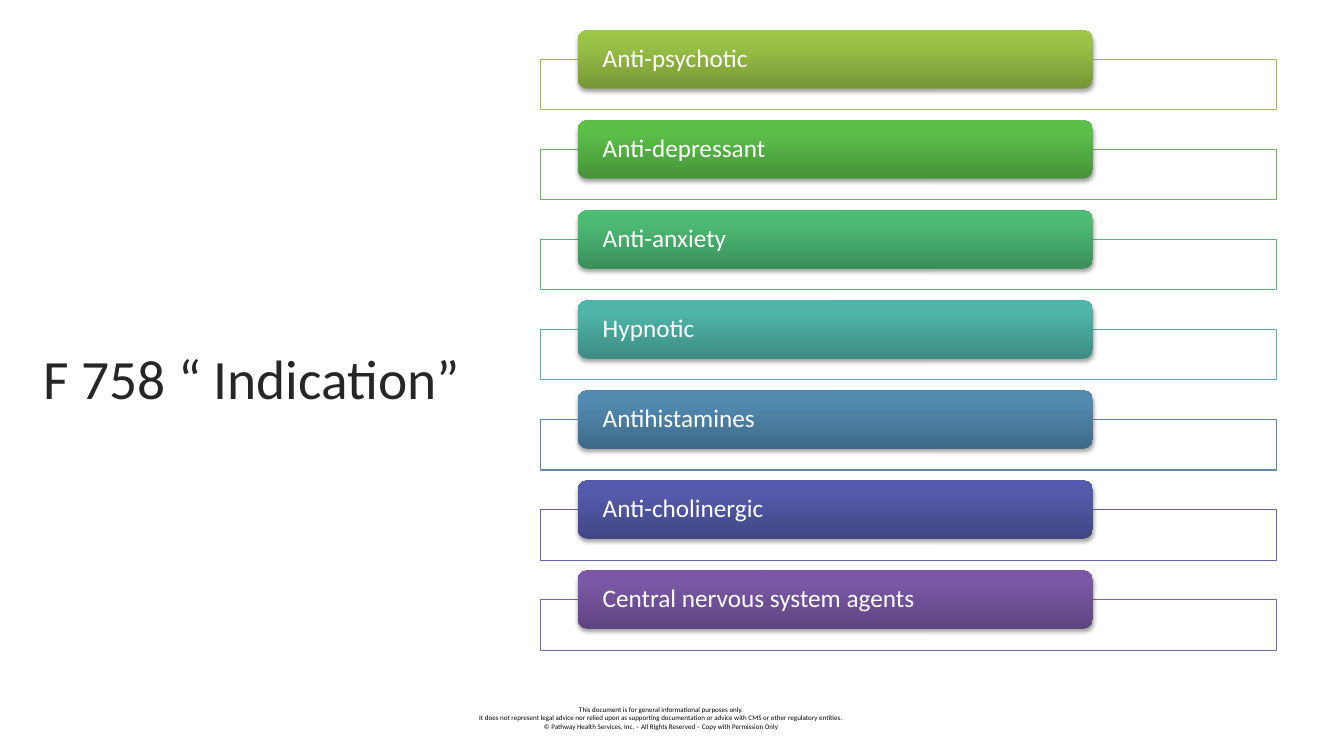
from copy import deepcopy

from lxml.etree import SubElement
from pptx import Presentation
from pptx.dml.color import RGBColor
from pptx.enum.shapes import MSO_SHAPE as Shape
from pptx.enum.text import MSO_ANCHOR as Anchor, MSO_AUTO_SIZE as AutoSize, PP_ALIGN as Align
from pptx.oxml.ns import qn
from pptx.util import Inches, Pt

WHITE = RGBColor(0xFF, 0xFF, 0xFF)
BLACK = RGBColor(0x00, 0x00, 0x00)
CHARCOAL = RGBColor(0x26, 0x26, 0x26)

TITLE = "F 758 “ Indication”"
DRUG_CLASSES = [
    ("Anti-psychotic", "9BBB59", ("779737", "9BC348", "9DC746")),
    ("Anti-depressant", "69B75B", ("479339", "5CBF4A", "5BC249")),
    ("Anti-anxiety", "5CB37C", ("3B8F5A", "4DBA75", "4BBD75")),
    ("Hypnotic", "5EAFA6", ("3D8B83", "50B5AA", "4EB8AC")),
    ("Antihistamines", "608CAB", ("3F6A88", "528AB0", "518BB3")),
    ("Anti-cholinergic", "6267A6", ("414684", "555BAB", "545AAE")),
    ("Central nervous system agents", "8064A2", ("5F4480", "7B58A6", "7C57A8")),
]
DISCLAIMER = [
    "This document is for general informational purposes only.",
    "It does not represent legal advice nor relied upon as supporting documentation "
    "or advice with CMS or other regulatory entities.",
    "© Pathway Health Services, Inc. – All Rights Reserved – Copy with Permission Only",
]
FIRST_TOP = 0.3
ROW_PITCH = (5.66 - FIRST_TOP) / (len(DRUG_CLASSES) - 1)


class SlideBuilder:
    """Holds the text style and the current slide, and draws each kind of element."""

    def __init__(self, deck):
        self.page = deck.slides.add_slide(deck.slide_layouts[5])
        self.font_name = "Calibri"

    def set_text(self, box, lines, size, color, align, frame_format, spacing=None):
        frame = box.text_frame
        for name, value in frame_format.items():
            setattr(frame, name, value)
        for index, line in enumerate(lines):
            para = frame.add_paragraph() if index else frame.paragraphs[0]
            para.alignment = align
            para.line_spacing = spacing
            span = para.add_run()
            span.text = line
            for name, value in {"name": self.font_name, "size": Pt(size)}.items():
                setattr(span.font, name, value)
            span.font.color.rgb = color

    def title(self, text, left, top, width, height):
        box = self.page.shapes.title
        place = {"left": left, "top": top, "width": width, "height": height}
        for name, value in place.items():
            setattr(box, name, Inches(value))
        frame_format = {"vertical_anchor": Anchor.MIDDLE, "word_wrap": True,
                        "auto_size": AutoSize.NONE}
        self.set_text(box, [text], 39.6, CHARCOAL, Align.LEFT, frame_format)

    def footer(self, lines, left, top, width, height):
        box = self.page.shapes.add_textbox(*map(Inches, (left, top, width, height)))
        frame_format = {"word_wrap": True, "auto_size": AutoSize.SHAPE_TO_FIT_TEXT}
        self.set_text(box, lines, 5, BLACK, Align.CENTER, frame_format)

    def shape(self, kind, left, top, width, height):
        box = self.page.shapes.add_shape(kind, *map(Inches, (left, top, width, height)))
        box.shadow.inherit = False
        return box

    def frame(self, left, top, width, height, line_color):
        box = self.shape(Shape.RECTANGLE, left, top, width, height)
        box.fill.solid()
        box.fill.fore_color.rgb = WHITE
        fill_color = box.element.spPr.find(qn("a:solidFill"))[0]
        SubElement(fill_color, qn("a:alpha"), val="90000")
        box.line.color.rgb = RGBColor.from_string(line_color)
        box.line.width = Pt(0.75)

    def pill(self, text, left, top, width, height, colors):
        box = self.shape(Shape.ROUNDED_RECTANGLE, left, top, width, height)
        box.line.fill.background()
        self.gradient(box, colors)
        self.drop_shadow(box)
        frame_format = {"vertical_anchor": Anchor.MIDDLE, "word_wrap": True,
                        "margin_left": Inches(0.22), "margin_right": Inches(0.22),
                        "margin_top": 0, "margin_bottom": 0}
        self.set_text(box, [text], 18, WHITE, Align.LEFT, frame_format, 0.9)

    def gradient(self, box, colors):
        box.fill.gradient()
        box.fill.gradient_angle = 90
        stop_list = box.element.spPr.find(".//" + qn("a:gsLst"))
        stop_list.append(deepcopy(stop_list[-1]))
        for stop, position, color in zip(box.fill.gradient_stops, (0, 0.8, 1), colors):
            stop.position = position
            stop.color.rgb = RGBColor.from_string(color)

    def drop_shadow(self, box):
        effects = box.element.spPr.find(qn("a:effectLst"))
        shadow = SubElement(effects, qn("a:outerShdw"), blurRad=str(Pt(3.1)),
                            dist=str(Pt(1.8)), dir="5400000", rotWithShape="0")
        color = SubElement(shadow, qn("a:srgbClr"), val=str(BLACK))
        SubElement(color, qn("a:alpha"), val="35000")


def main():
    deck = Presentation()
    deck.slide_width, deck.slide_height = Inches(13.33), Inches(7.5)
    slide = SlideBuilder(deck)
    slide.footer(DISCLAIMER, 3.67, 6.95, 5.78, 0.35)
    slide.title(TITLE, 0.33, 3.12, 4.5, 1.25)
    for row, (name, line_color, colors) in enumerate(DRUG_CLASSES):
        top = FIRST_TOP + row * ROW_PITCH
        slide.frame(5.36, top + 0.29, 7.3, 0.5, line_color)
        slide.pill(name, 5.73, top, 5.11, 0.58, colors)
    deck.save("out.pptx")


if __name__ == "__main__":
    main()
